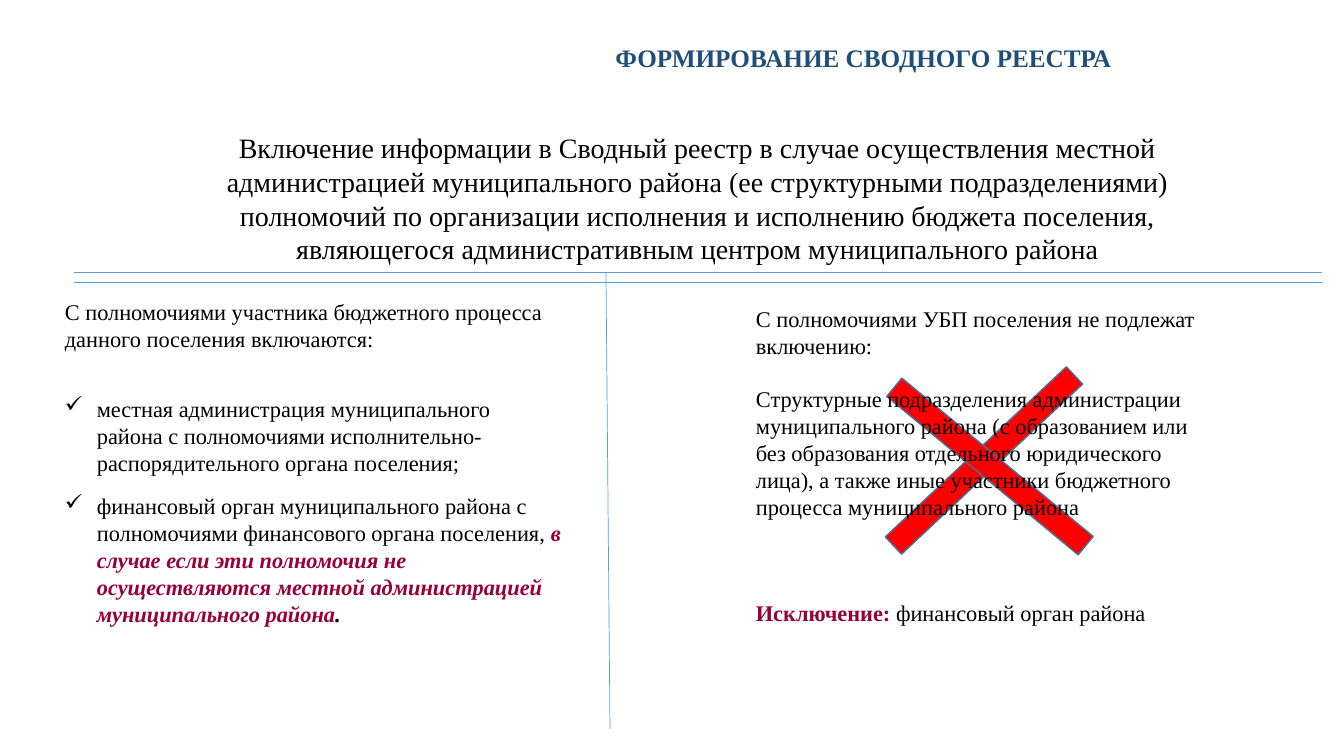
"""Builds the slide on forming the consolidated register."""
from lxml import etree
from pptx import Presentation
from pptx.dml.color import RGBColor
from pptx.enum.shapes import MSO_CONNECTOR, MSO_SHAPE
from pptx.enum.text import MSO_AUTO_SIZE, PP_ALIGN
from pptx.oxml.ns import qn
from pptx.util import Emu, Pt

BLACK = RGBColor(0x00, 0x00, 0x00)
NAVY = RGBColor(0x1F, 0x4E, 0x79)
BLUE = RGBColor(0x5B, 0x9B, 0xD5)
STEEL = RGBColor(0x43, 0x73, 0x9E)
RED = RGBColor(0xFF, 0x00, 0x00)
CRIMSON = RGBColor(0x99, 0x00, 0x33)
FONT = "Times New Roman"
EMU_PER_PX = 914400 / 100.8
BULLET_INDENT = 32

PLAIN = (BLACK, False, False)
HEADING = (NAVY, True, False)
WARNING = (CRIMSON, True, False)
CONDITION = (CRIMSON, True, True)
CONDITION_END = (BLACK, True, True)

# (space before in pt, bullet, runs)
INTRO = [(0, "", [(
    "Включение информации в Сводный реестр в случае осуществления местной "
    "администрацией муниципального района (ее структурными подразделениями) "
    "полномочий по организации исполнения и исполнению бюджета поселения, "
    "являющегося административным центром муниципального района", PLAIN)])]
TITLE = [(0, "", [("ФОРМИРОВАНИЕ СВОДНОГО РЕЕСТРА", HEADING)])]
INCLUDED = [
    (0, "", [("С полномочиями участника бюджетного процесса данного поселения "
              "включаются:", PLAIN)]),
    (31, "✓", [("местная администрация муниципального района с полномочиями "
                "исполнительно-распорядительного органа поселения;", PLAIN)]),
    (12, "✓", [("финансовый орган муниципального района с полномочиями "
                "финансового органа поселения, ", PLAIN),
               ("в случае если эти полномочия не осуществляются местной "
                "администрацией муниципального района", CONDITION),
               (".", CONDITION_END)]),
]
EXCLUDED = [
    (0, "", [("С полномочиями УБП поселения не подлежат включению:", PLAIN)]),
    (19, "", [("Структурные подразделения администрации муниципального района "
               "(с образованием или без образования отдельного юридического "
               "лица), а также иные участники бюджетного процесса "
               "муниципального района", PLAIN)]),
    (57, "", [("Исключение:", WARNING), (" финансовый орган района", PLAIN)]),
]
TEXTS = [
    ((171, 126, 1053, 146), 20, PP_ALIGN.CENTER, INTRO),
    ((463, 37, 801, 40), 18, PP_ALIGN.CENTER, TITLE),
    ((55, 293, 517, 370), 16, PP_ALIGN.LEFT, INCLUDED),
    ((746, 300, 478, 363), 16, PP_ALIGN.LEFT, EXCLUDED),
]
CROSS_BARS = [((815, 410, 338, 101), 316.8), ((821, 416, 338, 101), 39.6)]
DIVIDERS = [(74, 272, 1322, 272), (74, 282, 1322, 282), (606, 272, 610, 729)]


def px(length):
    return Emu(round(length * EMU_PER_PX))


def add_bar(slide, box, angle):
    bar = slide.shapes.add_shape(MSO_SHAPE.MATH_MINUS, *map(px, box))
    bar.rotation = angle
    bar.shadow.inherit = False
    bar.fill.solid()
    bar.fill.fore_color.rgb = RED
    bar.line.color.rgb = STEEL
    bar.line.width = Pt(1)


def add_divider(slide, ends):
    divider = slide.shapes.add_connector(MSO_CONNECTOR.STRAIGHT, *map(px, ends))
    divider.line.color.rgb = BLUE
    divider.line.width = Pt(0.5)
    etree.SubElement(divider._element.spPr, qn("a:effectLst"))


def add_bullet(paragraph, mark):
    properties = paragraph._p.get_or_add_pPr()
    properties.set("marL", str(px(BULLET_INDENT)))
    properties.set("indent", str(-px(BULLET_INDENT)))
    etree.SubElement(properties, qn("a:buChar"), char=mark)


def add_text(slide, box, size, align, paragraphs):
    frame = slide.shapes.add_textbox(*map(px, box)).text_frame
    frame.word_wrap = True
    frame.auto_size = MSO_AUTO_SIZE.SHAPE_TO_FIT_TEXT
    for index, (space, mark, runs) in enumerate(paragraphs):
        paragraph = frame.add_paragraph() if index else frame.paragraphs[0]
        paragraph.alignment = align
        if space:
            paragraph.space_before = Pt(space)
        if mark:
            add_bullet(paragraph, mark)
        paragraph.font.name = FONT
        paragraph.font.size = Pt(size)
        for words, (color, bold, italic) in runs:
            run = paragraph.add_run()
            run.text = words
            run.font.color.rgb = color
            run.font.bold = bold
            run.font.italic = italic


def main():
    deck = Presentation()
    deck.slide_width, deck.slide_height = px(1344), px(756)
    slide = deck.slides.add_slide(deck.slide_layouts[6])
    for box, angle in CROSS_BARS:
        add_bar(slide, box, angle)
    for ends in DIVIDERS:
        add_divider(slide, ends)
    for text in TEXTS:
        add_text(slide, *text)
    deck.save("out.pptx")


if __name__ == "__main__":
    main()
